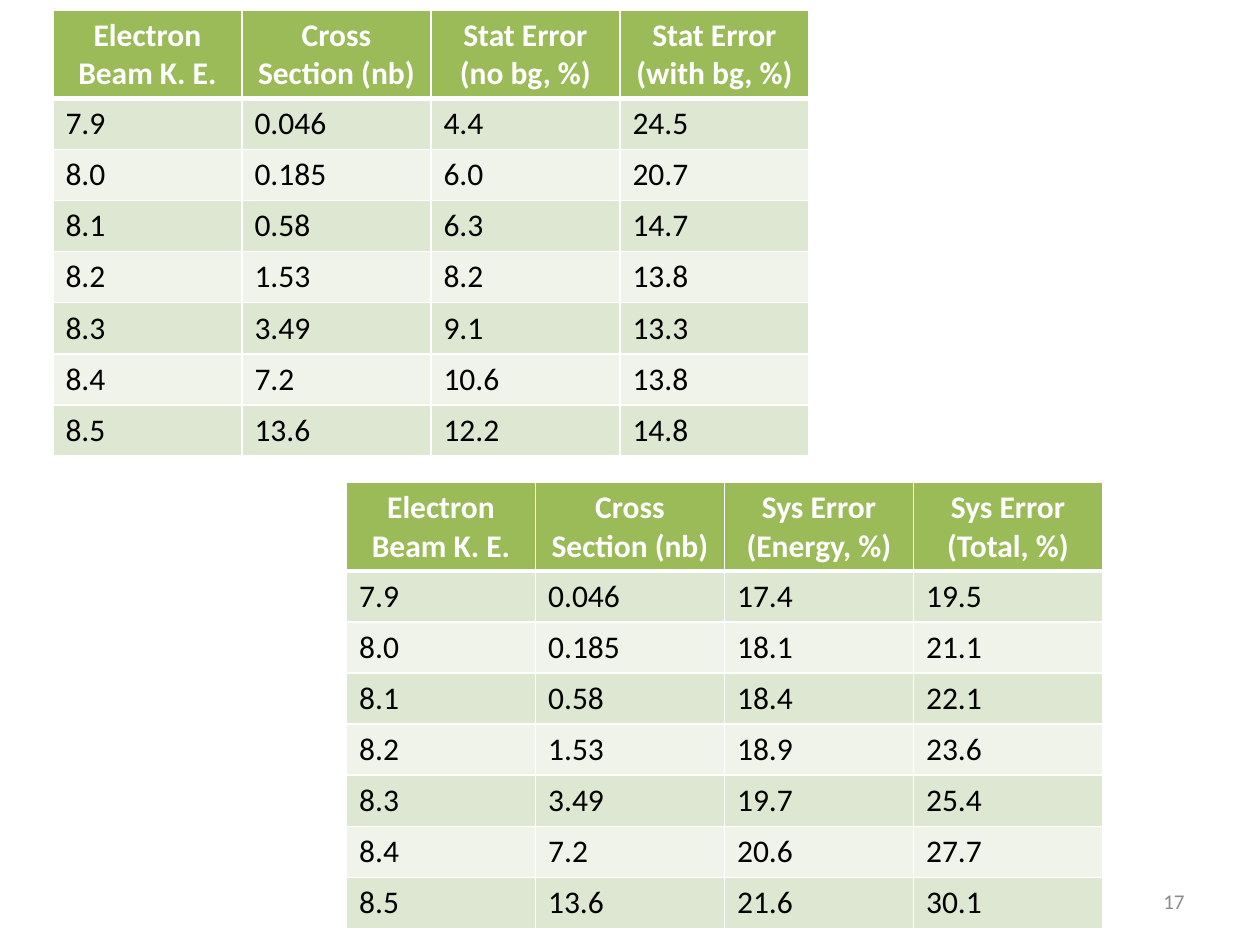
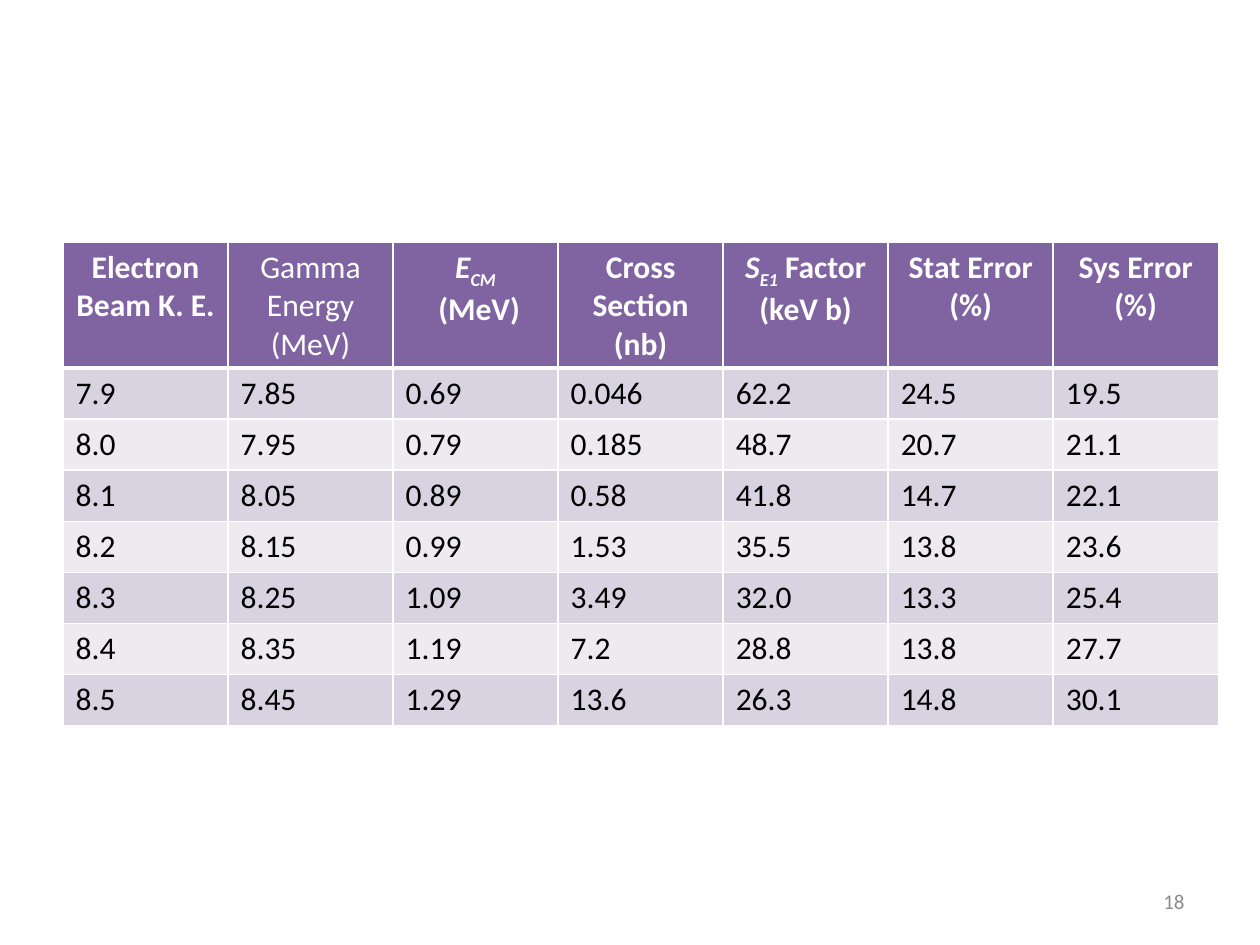
"""Build two slides of cross-section and error tables."""
from pptx import Presentation, util as u
from pptx.dml.color import RGBColor
from pptx.enum import text
from pptx.oxml import ns, xmlchemy

FONT = "Calibri"
COLORS = {
    "white": "FFFFFF", "ink": "000000", "number": "8C8C8C",
    "green": "9BBB59", "green_dark": "DEE7D1", "green_light": "EFF3EA",
    "purple": "8064A2", "purple_dark": "D8D3E0", "purple_light": "EDEAF0",
}

READINGS = {
    "beam": "7.9 8.0 8.1 8.2 8.3 8.4 8.5".split(),
    "gamma": "7.85 7.95 8.05 8.15 8.25 8.35 8.45".split(),
    "center_mass": "0.69 0.79 0.89 0.99 1.09 1.19 1.29".split(),
    "cross": "0.046 0.185 0.58 1.53 3.49 7.2 13.6".split(),
    "s_factor": "62.2 48.7 41.8 35.5 32.0 28.8 26.3".split(),
    "stat_clean": "4.4 6.0 6.3 8.2 9.1 10.6 12.2".split(),
    "stat": "24.5 20.7 14.7 13.8 13.3 13.8 14.8".split(),
    "sys_energy": "17.4 18.1 18.4 18.9 19.7 20.6 21.6".split(),
    "sys": "19.5 21.1 22.1 23.6 25.4 27.7 30.1".split(),
}


def bold(*lines):
    """Return heading paragraphs of one bold run each."""
    return [[(line, "bold")] for line in lines]


BEAM = ("beam", bold("Electron", "Beam K. E."))
CROSS = ("cross", bold("Cross Section (nb)"))
STAT_COLUMNS = [
    BEAM, CROSS,
    ("stat_clean", bold("Stat Error", "(no bg, %)")),
    ("stat", bold("Stat Error", "(with bg, %)")),
]
SYS_COLUMNS = [
    BEAM, CROSS,
    ("sys_energy", bold("Sys Error", "(Energy, %)")),
    ("sys", bold("Sys Error", "(Total, %)")),
]
SUMMARY_COLUMNS = [
    BEAM,
    ("gamma", [[("Gamma", "plain")], [("Energy (MeV)", "plain")]]),
    ("center_mass", [[("E", "italic"), ("CM", "subscript")], [(" (MeV)", "bold")]]),
    CROSS,
    ("s_factor", [[("S", "italic"), ("E1", "subscript"), (" Factor", "bold")],
                  [("(keV b)", "bold")]]),
    ("stat", bold("Stat Error", "(%)")),
    ("sys", bold("Sys Error", "(%)")),
]


def rgb(name):
    """Return the named colour."""
    return RGBColor.from_string(COLORS[name])


def add_run(para, words, color, size=18, style="plain"):
    """Add one formatted run to a paragraph."""
    span = para.add_run()
    span.text = words
    span.font.name = FONT
    span.font.size = u.Pt(size)
    span.font.color.rgb = rgb(color)
    span.font.bold = style != "plain"
    span.font.italic = style in ("italic", "subscript")
    if style == "subscript":
        span.font._element.set("baseline", "-25000")


def set_borders(cell, top, bottom):
    """Draw white cell borders, with top and bottom widths in points."""
    props = cell._tc.get_or_add_tcPr()
    widths = {"lnL": 1, "lnR": 1, "lnT": top, "lnB": bottom}
    for place, (tag, width) in enumerate(widths.items()):
        line = xmlchemy.OxmlElement(f"a:{tag}")
        line.set("w", str(u.Pt(width)))
        fill = xmlchemy.OxmlElement("a:solidFill")
        color = xmlchemy.OxmlElement("a:srgbClr")
        color.set("val", COLORS["white"])
        fill.append(color)
        line.append(fill)
        props.insert(place, line)


def paint_cell(cell, color, top=1, bottom=1):
    """Fill a cell and give it borders."""
    cell.fill.solid()
    cell.fill.fore_color.rgb = rgb(color)
    set_borders(cell, top, bottom)


def fill_heading(cell, lines, color):
    """Write a centred heading, one paragraph per line."""
    frame = cell.text_frame
    for index, line in enumerate(lines):
        para = frame.add_paragraph() if index else frame.paragraphs[0]
        para.alignment = text.PP_ALIGN.CENTER
        for words, style in line:
            add_run(para, words, "white", style=style)
    paint_cell(cell, color, bottom=3)


def add_readings(page, columns, left, top, width, head_height, theme):
    """Add a banded table of the chosen columns."""
    row_count = len(READINGS["beam"]) + 1
    row_height = u.Inches(2.84 / (row_count - 1))
    height = u.Inches(head_height) + row_height * (row_count - 1)
    table = page.shapes.add_table(row_count, len(columns), u.Inches(left),
                                  u.Inches(top), u.Inches(width), height).table
    table.horz_banding = False
    for row in table.rows:
        row.height = row_height
    table.rows[0].height = u.Inches(head_height)
    for col, (key, heading) in enumerate(columns):
        table.columns[col].width = u.Inches(width / len(columns))
        fill_heading(table.cell(0, col), heading, theme)
        for row, value in enumerate(READINGS[key], 1):
            cell = table.cell(row, col)
            add_run(cell.text_frame.paragraphs[0], value, "ink")
            band = "dark" if row % 2 else "light"
            paint_cell(cell, f"{theme}_{band}", top=3 if row == 1 else 1)


def add_page(deck, number):
    """Add a blank slide with its page number."""
    page = deck.slides.add_slide(deck.slide_layouts[6])
    box = page.shapes.add_textbox(u.Inches(7.17), u.Inches(6.95),
                                  u.Inches(2.33), u.Inches(0.4))
    frame = box.text_frame
    frame.word_wrap = True
    frame.vertical_anchor = text.MSO_ANCHOR.MIDDLE
    para = frame.paragraphs[0]
    para.alignment = text.PP_ALIGN.RIGHT
    add_run(para, str(number), "number", size=12)
    return page


def main():
    """Build and save the deck."""
    deck = Presentation()
    deck.slide_width, deck.slide_height = u.Inches(10), u.Inches(7.5)
    errors = add_page(deck, 17)
    add_readings(errors, STAT_COLUMNS, 0.42, 0.08, 6, 0.7, "green")
    add_readings(errors, SYS_COLUMNS, 2.75, 3.83, 6, 0.7, "green")
    summary = add_page(deck, 18)
    add_readings(summary, SUMMARY_COLUMNS, 0.5, 1.92, 9.17, 1, "purple")
    deck.save("out.pptx")


if __name__ == "__main__":
    main()
